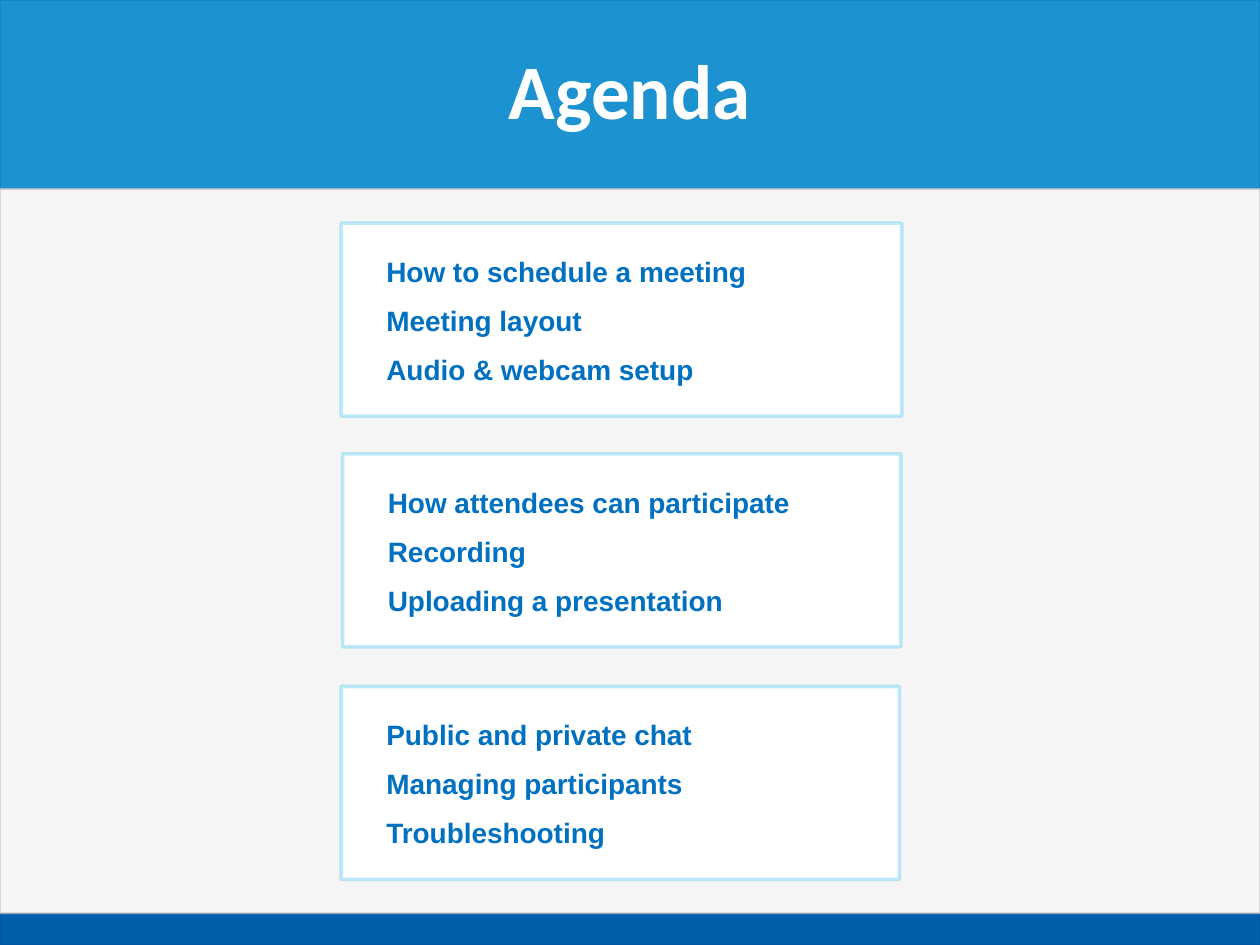
from lxml import etree
from pptx import Presentation
from pptx.dml.color import RGBColor
from pptx.enum.shapes import MSO_SHAPE
from pptx.enum.text import MSO_ANCHOR, PP_ALIGN
from pptx.oxml.ns import qn
from pptx.util import Cm, Pt

RECTANGLE = MSO_SHAPE.RECTANGLE
MIDDLE = MSO_ANCHOR.MIDDLE
CENTER = PP_ALIGN.CENTER
LEFT = PP_ALIGN.LEFT

COLORS = {
    "background": "F5F5F5",
    "header": "1D92D0",
    "footer": "005EAB",
    "footer_line": "002060",
    "frame": "D0CECE",
    "card": "FFFFFF",
    "card_line": "00B0F0",
    "title": "FFFFFF",
    "topic": "0070C0",
}
TITLE_FONT = {"name": "Calibri", "size": Pt(44), "bold": True}
TOPIC_FONT = {"name": "Arial", "size": Pt(16), "bold": True}
TITLE_PARAGRAPH = {"alignment": CENTER, "line_spacing": 0.9}
TOPIC_PARAGRAPH = {"alignment": LEFT, "line_spacing": 1.04, "space_after": Pt(8)}
TOPIC_INDENT = Cm(0.66)

WIDTH, HEIGHT = 25.4, 19.05
HEADER_HEIGHT, FOOTER_HEIGHT = 3.81, 0.64
BODY_HEIGHT = HEIGHT - HEADER_HEIGHT - FOOTER_HEIGHT
CARD_HEIGHT = 3.89


def add_panel(box, fill, line, line_width, line_opacity):
    """Add a rectangle (box in cm) with an optional fill and a see-through outline."""
    panel = slide.shapes.add_shape(RECTANGLE, *[Cm(length) for length in box])
    panel.shadow.inherit = False
    if fill:
        panel.fill.solid()
        panel.fill.fore_color.rgb = RGBColor.from_string(COLORS[fill])
    else:
        panel.fill.background()
    panel.line.width = Pt(line_width)
    panel.line.color.rgb = RGBColor.from_string(COLORS[line])
    line_color = panel.line._ln.find(".//" + qn("a:srgbClr"))
    etree.SubElement(line_color, qn("a:alpha"), val=str(line_opacity * 1000))
    return panel


def write_lines(panel, lines, color, font_format, paragraph_format, indent=0):
    frame = panel.text_frame
    frame.word_wrap = True
    frame.vertical_anchor = MIDDLE
    for number, line in enumerate(lines):
        paragraph = frame.add_paragraph() if number else frame.paragraphs[0]
        for attribute, value in paragraph_format.items():
            setattr(paragraph, attribute, value)
        paragraph._p.get_or_add_pPr().set("marL", str(indent))
        run = paragraph.add_run()
        run.text = line
        for attribute, value in font_format.items():
            setattr(run.font, attribute, value)
        run.font.color.rgb = RGBColor.from_string(COLORS[color])


presentation = Presentation()
presentation.slide_width, presentation.slide_height = Cm(WIDTH), Cm(HEIGHT)
slide = presentation.slides.add_slide(presentation.slide_layouts[6])
slide.background.fill.solid()
slide.background.fill.fore_color.rgb = RGBColor.from_string(COLORS["background"])

# Header, footer and body frame
header = add_panel((0, 0, WIDTH, HEADER_HEIGHT), "header", "footer", 0.75, 33)
write_lines(header, ["Agenda"], "title", TITLE_FONT, TITLE_PARAGRAPH)
add_panel((0, HEIGHT - FOOTER_HEIGHT, WIDTH, FOOTER_HEIGHT),
          "footer", "footer_line", 0.75, 15)
body = (0, HEADER_HEIGHT, WIDTH, BODY_HEIGHT)
add_panel(body, None, "frame", 1, 40)

# Agenda cards: left, top, width, topics
agenda = [
    (6.88, 4.5, 11.3,
     ["How to schedule a meeting", "Meeting layout", "Audio & webcam setup"]),
    (6.91, 9.15, 11.25,
     ["How attendees can participate", "Recording", "Uploading a presentation"]),
    (6.88, 13.84, 11.25,
     ["Public and private chat", "Managing participants", "Troubleshooting"]),
]
for left, top, width, topics in agenda:
    card = add_panel((left, top, width, CARD_HEIGHT), "card", "card_line", 2, 25)
    write_lines(card, topics, "topic", TOPIC_FONT, TOPIC_PARAGRAPH, TOPIC_INDENT)

add_panel(body, None, "frame", 1, 50)

presentation.save("out.pptx")
